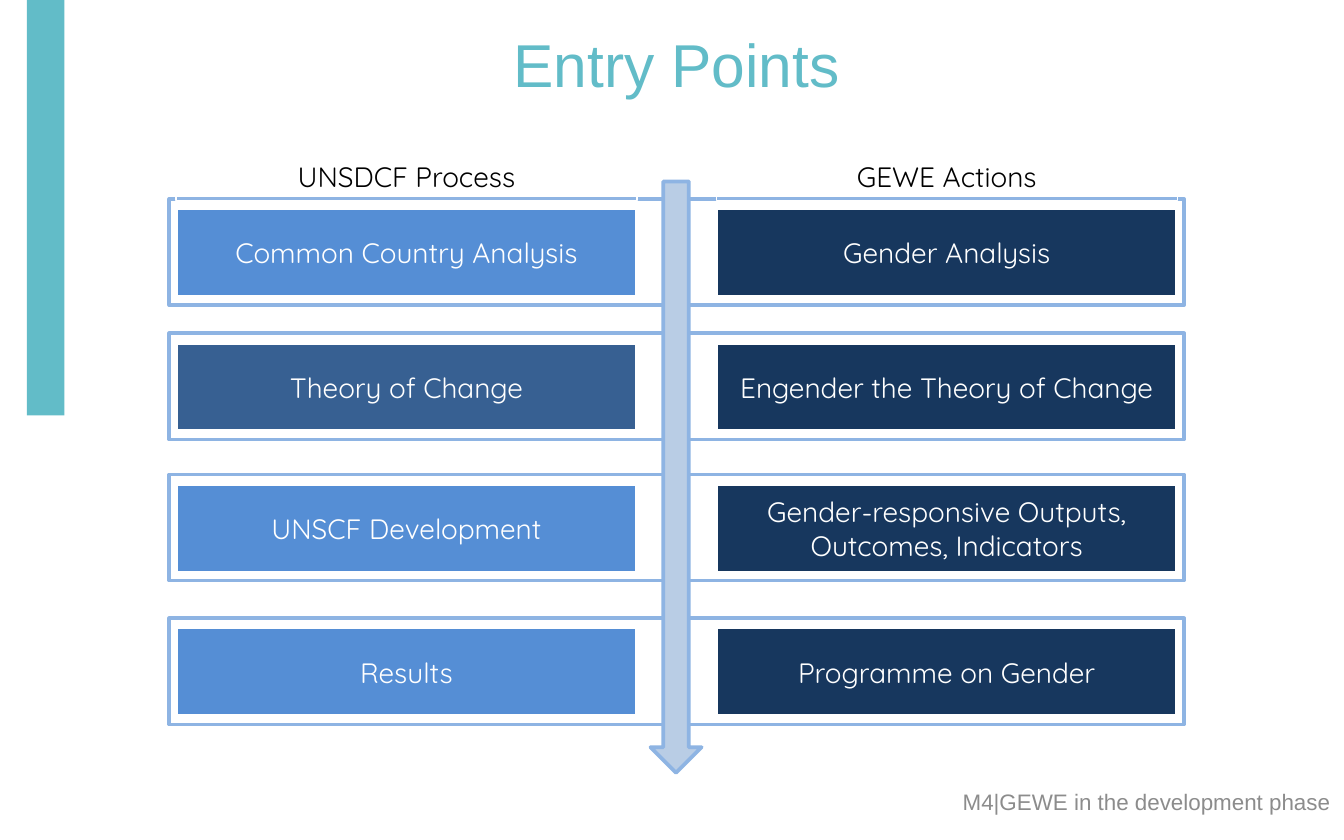
from pptx import Presentation
from pptx.dml.color import RGBColor
from pptx.enum.shapes import MSO_SHAPE as Shape
from pptx.enum.text import MSO_ANCHOR as Anchor, PP_ALIGN as Align
from pptx.util import Inches, Pt

TITLE = "Entry Points"
FOOTER = "M4|GEWE in the development phase"
HEADERS = ("UNSDCF Process", "GEWE Actions")
ROWS = [
    (1.48, "Common Country Analysis", "Gender Analysis", "process"),
    (2.48, "Theory of Change", "Engender the Theory of Change", "highlight"),
    (3.53, "UNSCF Development", "Gender-responsive Outputs, Outcomes, Indicators", "process"),
    (4.6, "Results", "Programme on Gender", "process"),
]

THEME = {
    "accent": "62BCC8", "frame": "8EB4E3", "arrow": "B9CDE5",
    "process": "558ED5", "highlight": "376092", "action": "17375E",
    "white": "FFFFFF", "black": "000000", "footer": "8C8C8C",
    "heading_font": "Arial", "body_font": "Quicksand",
    "title_size": 32.4, "body_size": 15, "footer_size": 12,
}

FRAME_LEFT, FRAME_WIDTH, FRAME_HEIGHT = 1.26, 7.55, 0.79
COLUMN_LEFTS, COLUMN_WIDTH = (1.31, 5.33), 3.43
BOX_HEIGHT, BOX_OFFSET = 0.66, 0.07
HEADER_TOP, HEADER_HEIGHT = 1.14, 0.35


def color(name):
    return RGBColor.from_string(THEME[name])


def write(shape, text, role, text_color, align=Align.CENTER, anchor=Anchor.MIDDLE):
    text_frame = shape.text_frame
    text_frame.word_wrap = True
    text_frame.vertical_anchor = anchor
    text_frame.text = text
    paragraph = text_frame.paragraphs[0]
    paragraph.alignment = align
    font = paragraph.runs[0].font
    font.name = THEME["body_font" if role == "body" else "heading_font"]
    font.size = Pt(THEME[role + "_size"])
    font.color.rgb = color(text_color)


def add_block(slide, kind, box, fill=None, line=None, line_width=2):
    shape = slide.shapes.add_shape(kind, *map(Inches, box))
    shape.shadow.inherit = False
    if fill:
        shape.fill.solid()
        shape.fill.fore_color.rgb = color(fill)
    else:
        shape.fill.background()
    if line:
        shape.line.color.rgb = color(line)
        shape.line.width = Pt(line_width)
    else:
        shape.line.fill.background()
    return shape


def add_label(slide, box, *style):
    write(slide.shapes.add_textbox(*map(Inches, box)), *style)


def main():
    presentation = Presentation()
    presentation.slide_width = Inches(10)
    presentation.slide_height = Inches(6.25)
    slide = presentation.slides.add_slide(presentation.slide_layouts[6])

    add_block(slide, Shape.RECTANGLE, (0.2, 0, 0.28, 3.09), "accent")
    add_label(slide, (FRAME_LEFT, 0.24, FRAME_WIDTH, 0.46), TITLE, "title", "accent")

    for top, *_ in ROWS:
        add_block(slide, Shape.RECTANGLE, (FRAME_LEFT, top, FRAME_WIDTH, FRAME_HEIGHT),
                  "white", "frame")
    add_block(slide, Shape.DOWN_ARROW, (4.84, 1.35, 0.38, 4.4), "arrow", "frame")

    for top, process, action, process_fill in ROWS:
        for left, text, fill in zip(COLUMN_LEFTS, (process, action), (process_fill, "action")):
            box = (left, top + BOX_OFFSET, COLUMN_WIDTH, BOX_HEIGHT)
            write(add_block(slide, Shape.RECTANGLE, box, fill, "white"), text, "body", "white")

    for left, text in zip(COLUMN_LEFTS, HEADERS):
        box = (left, HEADER_TOP, COLUMN_WIDTH, HEADER_HEIGHT)
        header = add_block(slide, Shape.RECTANGLE, box, None, "white", 0.75)
        write(header, text, "body", "black", anchor=Anchor.TOP)

    add_label(slide, (3.62, 5.85, 6.38, 0.23), FOOTER, "footer", "footer", Align.RIGHT)
    presentation.save("out.pptx")


if __name__ == "__main__":
    main()
